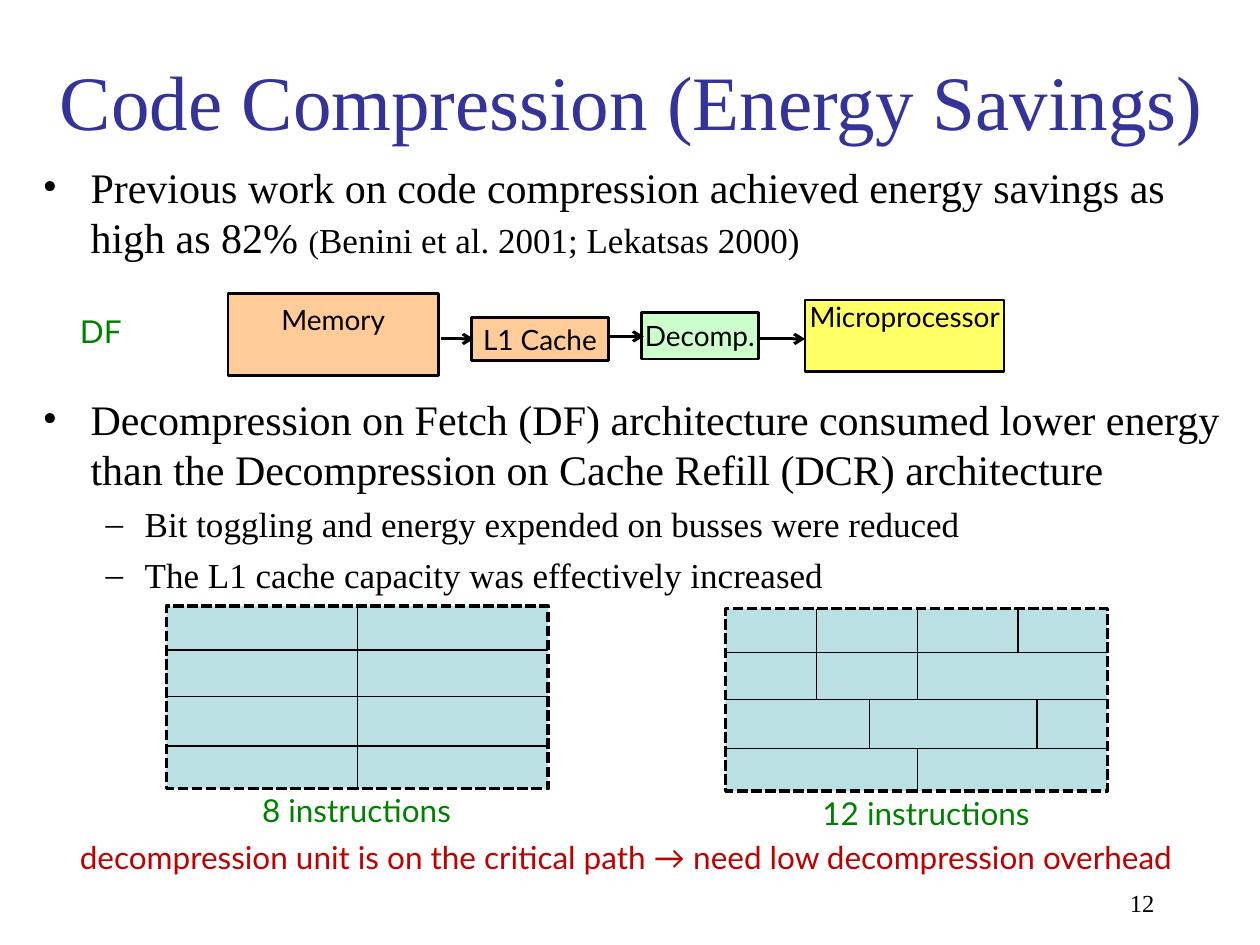
from pptx import Presentation, util as u
from pptx.dml.color import RGBColor
from pptx.enum import dml, shapes, text
from pptx.oxml.ns import qn
from lxml import etree

SERIF, SANS = "Times New Roman", "Lato"
BLACK, GREEN, RED = "000000", "008000", "C00000"
LEFT, MID, RIGHT = text.PP_ALIGN.LEFT, text.PP_ALIGN.CENTER, text.PP_ALIGN.RIGHT
TOP, CENTER = text.MSO_ANCHOR.TOP, text.MSO_ANCHOR.MIDDLE


def paint(target, color):
    if hasattr(target, "solid"):
        target.solid()
        target = target.fore_color
    target.rgb = RGBColor.from_string(color)


def place(box):
    return [u.Inches(n) for n in box]


def add_run(para, words, size, font=SANS, color=BLACK):
    run = para.add_run()
    run.text = words
    run.font.size = u.Pt(size)
    run.font.name = font
    paint(run.font.color, color)


def add_note(slide, box, words, size=18, font=SANS, color=GREEN, align=MID):
    frame = slide.shapes.add_textbox(*place(box)).text_frame
    frame.word_wrap = True
    para = frame.paragraphs[0]
    para.alignment = align
    add_run(para, words, size, font, color)


def add_title(slide, box, words):
    title = slide.shapes.title
    title.left, title.top, title.width, title.height = place(box)
    frame = title.text_frame
    frame.auto_size = text.MSO_AUTO_SIZE.NONE
    frame.vertical_anchor = CENTER
    para = frame.paragraphs[0]
    para.alignment = MID
    add_run(para, words, 44, SERIF, "333399")


def add_list(slide, box, items):
    frame = slide.shapes.add_textbox(*place(box)).text_frame
    frame.word_wrap = True
    for i, (level, runs) in enumerate(items):
        para = frame.paragraphs[0] if i == 0 else frame.add_paragraph()
        para.level = level
        para.alignment = LEFT
        para.space_before = u.Pt(5 if i else 0)
        mark, left, hang = [("•", 0.38, 0.38), ("–", 0.81, 0.31)][level]
        props = para._p.get_or_add_pPr()
        props.set("marL", str(u.Inches(left)))
        props.set("indent", str(-u.Inches(hang)))
        etree.SubElement(props, qn("a:buFont"), typeface=SERIF)
        etree.SubElement(props, qn("a:buChar"), char=mark)
        for words, size in runs:
            add_run(para, words, size, SERIF)


def add_rect(slide, box, fill, weight):
    rect = slide.shapes.add_shape(shapes.MSO_SHAPE.RECTANGLE, *place(box))
    rect.shadow.inherit = False
    paint(rect.fill, fill)
    paint(rect.line.fill, BLACK)
    rect.line.width = u.Pt(weight)
    return rect


def add_line(slide, start, end, weight=0.75, arrow=False):
    line = slide.shapes.add_connector(
        shapes.MSO_CONNECTOR.STRAIGHT, *place(start + end))
    paint(line.line.fill, BLACK)
    line.line.width = u.Pt(weight)
    props = line._element.spPr
    if arrow:
        etree.SubElement(props.find(qn("a:ln")), qn("a:tailEnd"), type="arrow")
    etree.SubElement(props, qn("a:effectLst"))


def add_flow(slide, box):
    x, y = box[:2]
    parts = [
        ("Memory", (0, 0, 1.67, 0.65), "FFCC99", TOP, 0.07),
        ("L1 Cache", (1.93, 0.19, 1.09, 0.34), "FFCC99", CENTER, 0),
        ("Decomp.", (3.28, 0.15, 0.93, 0.37), "CCFFCC", CENTER, 0),
        ("Microprocessor", (4.58, 0.05, 1.67, 0.57), "FFFF66", TOP, 0),
    ]
    for words, (dx, dy, wide, high), fill, anchor, inset in parts:
        rect = add_rect(slide, (x + dx, y + dy, wide, high), fill, 1.5)
        if words == "Microprocessor":
            rect.width = u.Inches(1.58)
        frame = rect.text_frame
        frame.word_wrap = False
        frame.vertical_anchor = anchor
        frame.margin_left = frame.margin_right = frame.margin_bottom = 0
        frame.margin_top = u.Inches(inset)
        para = frame.paragraphs[0]
        para.alignment = MID
        add_run(para, words, 16)
    for start, end, dy in [(1.69, 1.95, 0.36), (3.02, 3.3, 0.34), (4.21, 4.58, 0.36)]:
        add_line(slide, (x + start, y + dy), (x + end, y + dy), 1.75, True)


def add_cache(slide, box, splits, label):
    x, y, wide, high = box
    rows = [0, 0.35, 0.72, 1.11, high]
    rect = add_rect(slide, box, "BBE0E3", 2)
    rect.line.dash_style = dml.MSO_LINE.SQUARE_DOT
    for dy in rows[1:-1]:
        add_line(slide, (x, y + dy), (x + wide, y + dy))
    for dx, first, last in splits:
        add_line(slide, (x + dx, y + rows[first]), (x + dx, y + rows[last]))
    words, shift = label
    add_note(slide, (x + shift, y + high - 0.03, 1.86, 0.4), words)


def main():
    deck = Presentation()
    deck.slide_width, deck.slide_height = u.Inches(10), u.Inches(7.5)
    slide = deck.slides.add_slide(deck.slide_layouts[5])
    add_title(slide, (0.18, 0.17, 9.67, 1.25), "Code Compression (Energy Savings)")
    add_list(slide, (0.24, 1.23, 9.51, 1), [
        (0, [("Previous work on code compression achieved energy savings as high as 82% ", 24),
             ("(", 18), ("Benini et al. 2001; Lekatsas 2000)", 20)]),
    ])
    add_note(slide, (0.41, 2.43, 0.78, 0.4), "DF")
    add_flow(slide, (1.81, 2.33, 6.16, 0.65))
    add_list(slide, (0.24, 3.07, 9.55, 1.41), [
        (0, [("Decompression on Fetch (DF) architecture consumed lower energy "
              "than the Decompression on Cache Refill (DCR) architecture", 24)]),
        (1, [("Bit toggling and energy expended on busses were reduced", 20)]),
        (1, [("The L1 cache capacity was effectively increased", 20)]),
    ])
    add_cache(slide, (1.32, 4.81, 3.03, 1.45), [(1.52, 0, 4)],
              ("8 instructions", 0.58))
    add_cache(slide, (5.76, 4.83, 3.03, 1.45),
              [(0.72, 0, 2), (1.52, 0, 2), (2.32, 0, 1),
               (1.14, 2, 3), (2.47, 2, 3), (1.52, 3, 4)],
              ("12 instructions", 0.66))
    add_note(slide, (0.23, 6.6, 9.48, 0.4),
             "decompression unit is on the critical path → need low decompression overhead",
             color=RED)
    add_note(slide, (7.18, 7, 2.08, 0.5), "12", 14, SERIF, BLACK, RIGHT)
    deck.save("out.pptx")


if __name__ == "__main__":
    main()
